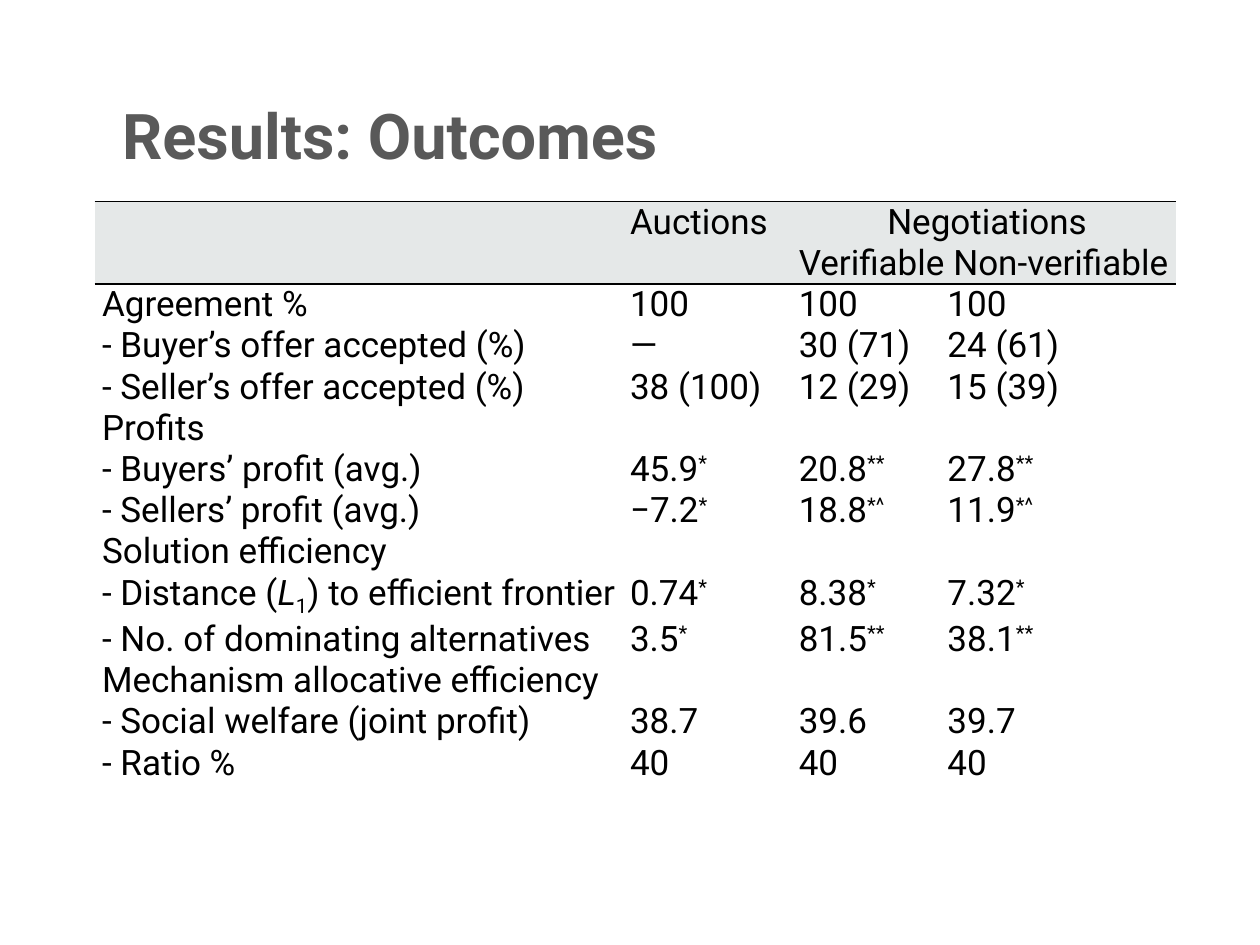
from dataclasses import dataclass

from lxml.etree import SubElement
from pptx import Presentation
from pptx.dml.color import RGBColor
from pptx.enum.text import MSO_ANCHOR, MSO_AUTO_SIZE, PP_ALIGN
from pptx.oxml import parse_xml
from pptx.oxml.ns import nsdecls, qn
from pptx.util import Inches, Pt


@dataclass(frozen=True)
class Theme:
    font: str = "Roboto"
    title_size: int = 36
    table_size: int = 20
    title: str = "595959"
    text: str = "000000"
    rule: str = "000000"
    header: str = "E5E8E8"
    plain_table: str = "{2D5ABB26-0587-4C30-8999-92F81FD0307C}"


COLUMN_WIDTHS = (4.25, 1.34, 1.18, 1.81)
ROW_HEIGHT = 0.31
LABEL_INDENT = 0.06
HEADER_ROWS = 2
SUPERSCRIPT, SUBSCRIPT = "30000", "-25000"

DISTANCE_LABEL = [
    ("- Distance (", {}),
    ("L", {"i": "1"}),
    ("1", {"baseline": SUBSCRIPT}),
    (") to efficient frontier", {}),
]

ROWS = [
    ("", "Auctions", "Negotiations", ""),
    ("", "", "Verifiable", "Non-verifiable"),
    ("Agreement %", "100", "100", "100"),
    ("- Buyer’s offer accepted (%)", "—", "30 (71)", "24 (61)"),
    ("- Seller’s offer accepted (%)", "38 (100)", "12 (29)", "15 (39)"),
    ("Profits", "", "", ""),
    ("- Buyers’ profit (avg.)", "45.9*", "20.8**", "27.8**"),
    ("- Sellers’ profit (avg.)", "−7.2*", "18.8*^", "11.9*^"),
    ("Solution efficiency", "", "", ""),
    (DISTANCE_LABEL, "0.74*", "8.38*", "7.32*"),
    ("- No. of dominating alternatives", "3.5*", "81.5**", "38.1**"),
    ("Mechanism allocative efficiency", "", "", ""),
    ("- Social welfare (joint profit)", "38.7", "39.6", "39.7"),
    ("- Ratio %", "40", "40", "40"),
]


def split_marks(text):
    """Separate the significance marks that end a value, as a raised run."""
    value = text.rstrip("*^")
    marks = text[len(value):]
    return [(value, {})] + ([(marks, {"baseline": SUPERSCRIPT})] if marks else [])


class SlideBuilder:
    def __init__(self, slide, theme):
        self.slide = slide
        self.theme = theme

    def style(self, p, size, color, bold=False):
        p.font.name = self.theme.font
        p.font.size = Pt(size)
        p.font.bold = bold
        p.font.color.rgb = RGBColor.from_string(color)

    def title(self, text, left, top, width, height):
        sp = self.slide.shapes.title
        sp.left, sp.top = Inches(left), Inches(top)
        sp.width, sp.height = Inches(width), Inches(height)
        tf = sp.text_frame
        tf.text = text
        tf.auto_size = MSO_AUTO_SIZE.NONE
        tf.vertical_anchor = MSO_ANCHOR.BOTTOM
        p = tf.paragraphs[0]
        p.alignment = PP_ALIGN.LEFT
        p.line_spacing = 0.8
        self.style(p, self.theme.title_size, self.theme.title, bold=True)

    def table(self, rows, left, top):
        frame = self.slide.shapes.add_table(
            len(rows), len(COLUMN_WIDTHS), Inches(left), Inches(top),
            Inches(sum(COLUMN_WIDTHS)), Inches(ROW_HEIGHT * len(rows)))
        table = frame.table
        table.first_row = table.horz_banding = False
        style_id = table._tbl.tblPr.find(qn("a:tableStyleId"))
        style_id.text = self.theme.plain_table
        for column, width in zip(table.columns, COLUMN_WIDTHS):
            column.width = Inches(width)
        for i, row in enumerate(rows):
            table.rows[i].height = Inches(ROW_HEIGHT)
            for j, content in enumerate(row):
                cell = table.cell(i, j)
                self.fill_cell(cell, content, i < HEADER_ROWS)
                if j == 0:
                    indent = str(Inches(LABEL_INDENT))
                    cell.text_frame.paragraphs[0]._p.get_or_add_pPr().set("indent", indent)
        for j in range(len(COLUMN_WIDTHS)):
            self.border(table.cell(0, j), "lnT")
            self.border(table.cell(HEADER_ROWS - 1, j), "lnB")
        return table

    def fill_cell(self, cell, content, is_header):
        cell.margin_left = cell.margin_top = cell.margin_bottom = 0
        cell.margin_right = Inches(0.01)
        if is_header:
            cell.fill.solid()
            cell.fill.fore_color.rgb = RGBColor.from_string(self.theme.header)
        else:
            cell.fill.background()
        p = cell.text_frame.paragraphs[0]
        p.alignment = PP_ALIGN.LEFT if is_header else PP_ALIGN.JUSTIFY
        self.style(p, self.theme.table_size, self.theme.text)
        if not content:
            return
        runs = split_marks(content) if isinstance(content, str) else content
        for text, attributes in runs:
            r = p.add_run()
            r.text = text
            for name, value in attributes.items():
                r.font._element.set(name, value)

    def border(self, cell, edge):
        line = parse_xml(f'<a:{edge} {nsdecls("a")} w="{Pt(1)}"/>')
        fill = SubElement(line, qn("a:solidFill"))
        SubElement(fill, qn("a:srgbClr")).set("val", self.theme.rule)
        cell._tc.get_or_add_tcPr().insert(0, line)


def center(cell, margin):
    cell.margin_left = Inches(margin)
    cell.margin_right = Inches(max(margin, 0.01))
    cell.text_frame.paragraphs[0].alignment = PP_ALIGN.CENTER


def main():
    prs = Presentation()
    prs.slide_width, prs.slide_height = Inches(10), Inches(7.5)
    title_only = prs.slide_layouts[5]
    builder = SlideBuilder(prs.slides.add_slide(title_only), Theme())

    builder.title("Results: Outcomes", 0.87, 0.58, 7.13, 0.83)
    table = builder.table(ROWS, 0.75, 1.6)
    negotiations = table.cell(0, 2)
    negotiations.merge(table.cell(0, 3))
    center(negotiations, 0.05)
    center(table.cell(1, 3), 0)

    prs.save("out.pptx")


if __name__ == "__main__":
    main()
